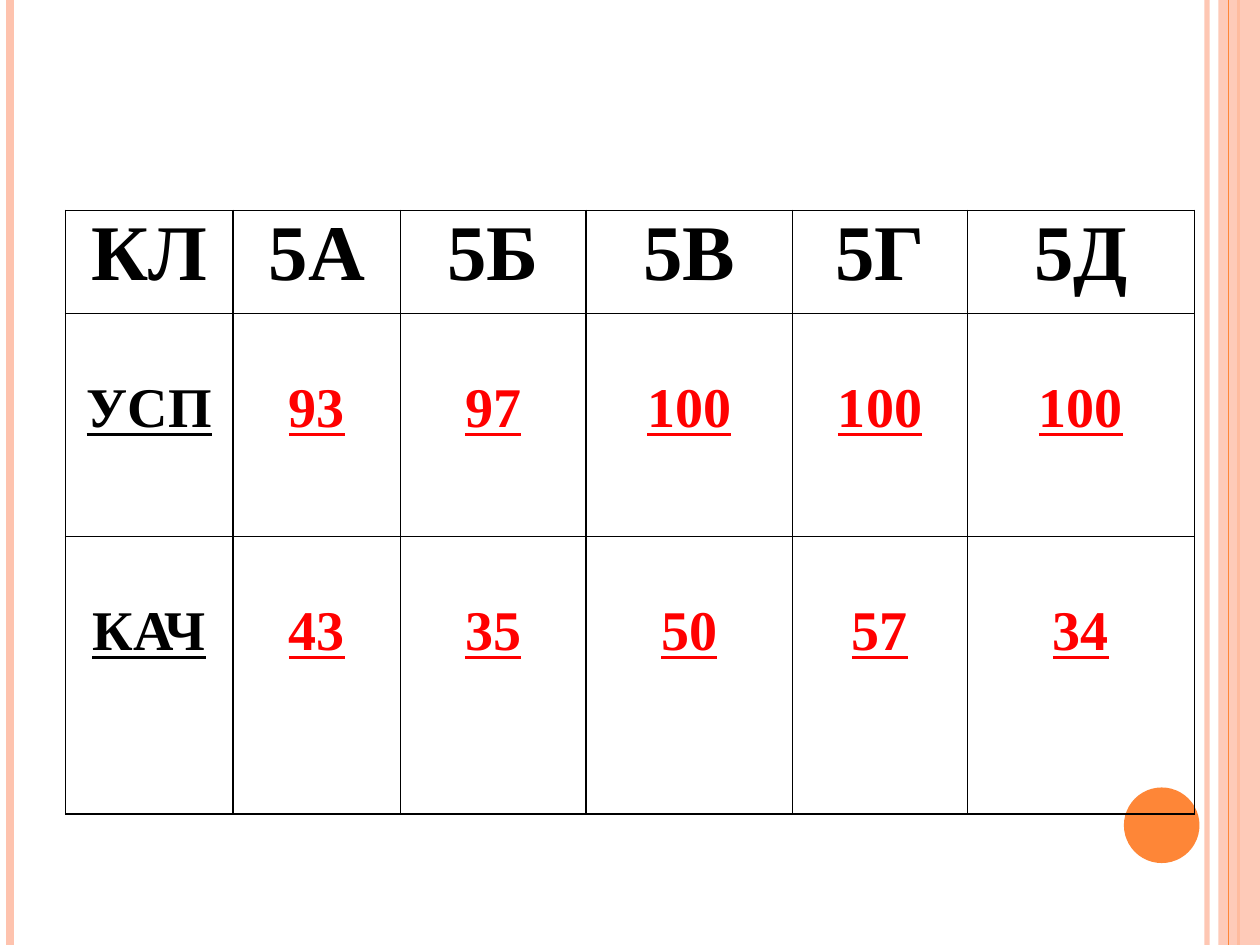
import pptx
import pptx.util
import pptx.dml.color
import pptx.enum.shapes
import pptx.enum.text
import pptx.oxml
import pptx.oxml.ns
import lxml.etree

Inches, Pt = pptx.util.Inches, pptx.util.Pt
SHAPE = pptx.enum.shapes.MSO_SHAPE
qn = pptx.oxml.ns.qn

PINK, ORANGE, BLACK, RED = "FEC3AE", "FE8637", "000000", "FF0000"
ROWS = [
    ["КЛ", "5А", "5Б", "5В", "5Г", "5Д"],
    ["УСП", "93", "97", "100", "100", "100"],
    ["КАЧ", "43", "35", "50", "57", "34"],
]
COL_WIDTHS = [1.33, 1.33, 1.47, 1.64, 1.39, 1.8]
ROW_HEIGHTS = [0.82, 1.77, 2.2]
BACK_STRIPES = [(9.58, PINK, 3, 93), (0.08, PINK, 4.5, 100), (9.83, ORANGE, 1.5, 100)]
FRONT_STRIPE = (9.75, ORANGE, 0.75, 100)


def rgb(value):
    return pptx.dml.color.RGBColor.from_string(value)


def set_alpha(element, percent):
    if percent < 100:
        color = next(element.iter(qn("a:srgbClr")))
        lxml.etree.SubElement(color, qn("a:alpha")).set("val", str(percent * 1000))


def add_stripe(slide, x, color, width, opacity):
    line = slide.shapes.add_connector(
        pptx.enum.shapes.MSO_CONNECTOR.STRAIGHT, Inches(x), 0, Inches(x), Inches(7.5))
    line.line.color.rgb = rgb(color)
    line.line.width = Pt(width)
    sp_pr = line._element.spPr
    set_alpha(sp_pr, opacity)
    lxml.etree.SubElement(sp_pr, qn("a:effectLst"))


def add_solid(slide, kind, box, color, opacity=100):
    sp = slide.shapes.add_shape(kind, *map(Inches, box))
    sp.shadow.inherit = False
    sp.fill.solid()
    sp.fill.fore_color.rgb = rgb(color)
    sp.line.fill.background()
    set_alpha(sp._element.spPr, opacity)


def set_borders(cell):
    tc_pr = cell._tc.get_or_add_tcPr()
    for i, side in enumerate(("L", "R", "T", "B")):
        ln = pptx.oxml.parse_xml(
            f'<a:ln{side} xmlns:a="http://schemas.openxmlformats.org/drawingml/2006/main" '
            f'w="{Pt(1)}"><a:solidFill><a:srgbClr val="{BLACK}"/></a:solidFill></a:ln{side}>')
        tc_pr.insert(i, ln)


def fill_cell(cell, text, header, color):
    cell.fill.background()
    set_borders(cell)
    cell.margin_left = cell.margin_right = Inches(0.03)
    cell.margin_top = Inches(0 if header else 0.51)
    cell.margin_bottom = 0
    p = cell.text_frame.paragraphs[0]
    p.text = text
    p.alignment = pptx.enum.text.PP_ALIGN.CENTER
    p.font.name = "Times New Roman"
    p.font.size = Pt(45 if header else 32)
    p.font.bold = True
    p.font.underline = not header
    p.font.color.rgb = rgb(color)


def add_grades(slide):
    frame = slide.shapes.add_table(
        len(ROWS), len(COL_WIDTHS), Inches(0.52), Inches(1.67),
        Inches(sum(COL_WIDTHS)), Inches(sum(ROW_HEIGHTS)))
    table = frame.table
    table.first_row = table.horz_banding = False
    for col, width in zip(table.columns, COL_WIDTHS):
        col.width = Inches(width)
    for row, height in zip(table.rows, ROW_HEIGHTS):
        row.height = Inches(height)
    for r, row in enumerate(ROWS):
        for c, text in enumerate(row):
            fill_cell(table.cell(r, c), text, r == 0, RED if r and c else BLACK)


def main():
    prs = pptx.Presentation()
    prs.slide_width, prs.slide_height = Inches(10), Inches(7.5)
    slide = prs.slides.add_slide(prs.slide_layouts[6])
    for stripe in BACK_STRIPES:
        add_stripe(slide, *stripe)
    add_solid(slide, SHAPE.RECTANGLE, (9.67, 0, 0.33, 7.5), PINK, 87)
    add_stripe(slide, *FRONT_STRIPE)
    add_solid(slide, SHAPE.OVAL, (8.92, 6.25, 0.6, 0.6), ORANGE)
    add_grades(slide)
    prs.save("out.pptx")


if __name__ == "__main__":
    main()
